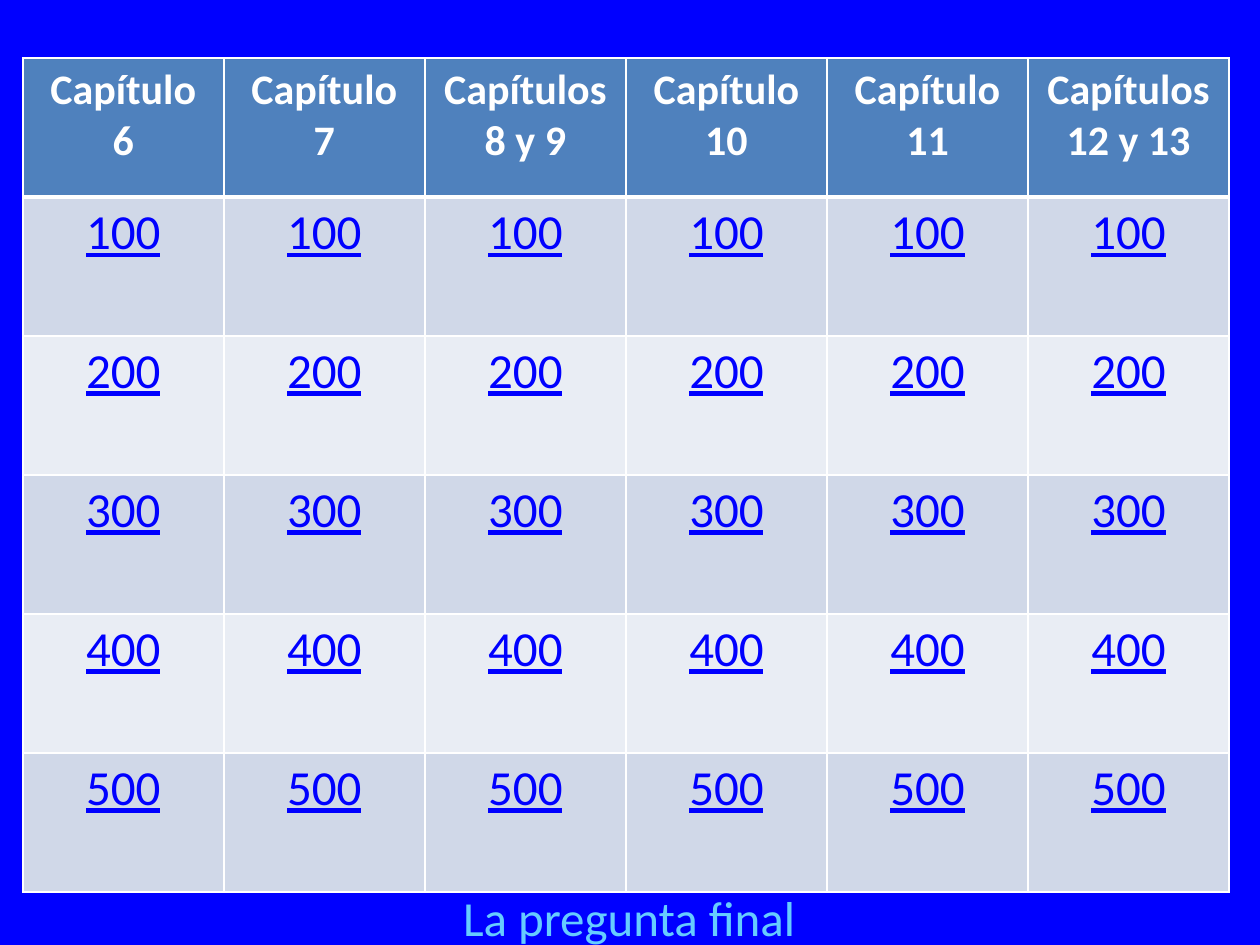
from pptx import Presentation
from pptx.dml.color import RGBColor
from pptx.enum.text import MSO_AUTO_SIZE, PP_ALIGN
from pptx.oxml import parse_xml
from pptx.oxml.ns import nsdecls
from pptx.util import Pt

BLUE, WHITE, SKY = "0000FF", "FFFFFF", "66CCFF"
HEADER, BANDS = "4F81BD", ("D0D8E8", "E9EDF4")


def color(value):
    return RGBColor.from_string(value)


def write(tf, text, size=28, fill=WHITE, bold=False, underline=False, font="Calibri"):
    """Put one centred, formatted paragraph in a text frame."""
    tf.word_wrap = True
    p = tf.paragraphs[0]
    p.alignment = PP_ALIGN.CENTER
    r = p.add_run()
    r.text = text
    r.font.name, r.font.size = font, Pt(size)
    r.font.bold, r.font.underline = bold, underline
    r.font.color.rgb = color(fill)


def set_borders(cell, bottom=1, top=1):
    """Draw white cell edges; the schema wants them ahead of the fill."""
    widths = {"lnL": 1, "lnR": 1, "lnT": top, "lnB": bottom}
    for i, (tag, width) in enumerate(widths.items()):
        cell._tc.get_or_add_tcPr().insert(i, parse_xml(
            f'<a:{tag} {nsdecls("a")} w="{Pt(width)}"><a:solidFill>'
            f'<a:srgbClr val="{WHITE}"/></a:solidFill></a:{tag}>'))


class Board:
    """A quiz board slide and its style."""

    def __init__(self, prs):
        self.s = prs.slides.add_slide(prs.slide_layouts[6])
        bg = self.s.background.fill
        bg.solid()
        bg.fore_color.rgb = color(BLUE)

    def grid(self, rows, x, y, col_width, row_height):
        n_rows, n_cols = len(rows), len(rows[0])
        table = self.s.shapes.add_table(
            n_rows, n_cols, Pt(x), Pt(y),
            Pt(col_width * n_cols), Pt(row_height * n_rows)).table
        for col in table.columns:
            col.width = Pt(col_width)
        for i, values in enumerate(rows):
            table.rows[i].height = Pt(row_height)
            for j, value in enumerate(values):
                self.cell(table.cell(i, j), value, i)

    def cell(self, cell, text, row):
        header = row == 0
        cell.fill.solid()
        cell.fill.fore_color.rgb = color(HEADER if header else BANDS[(row - 1) % 2])
        set_borders(cell, bottom=3 if header else 1, top=3 if row == 1 else 1)
        if header:
            write(cell.text_frame, text, size=24, bold=True)
        else:
            write(cell.text_frame, text, fill=BLUE, underline=True)

    def label(self, text, x, y, width, height, **style):
        tf = self.s.shapes.add_textbox(Pt(x), Pt(y), Pt(width), Pt(height)).text_frame
        write(tf, text, **style)
        tf.auto_size = MSO_AUTO_SIZE.SHAPE_TO_FIT_TEXT


def main():
    prs = Presentation()
    prs.slide_width, prs.slide_height = Pt(720), Pt(540)
    board = Board(prs)

    # Chapters across, points down
    chapters = ["Capítulo 6", "Capítulo 7", "Capítulos 8 y 9",
                "Capítulo 10", "Capítulo 11", "Capítulos 12 y 13"]
    points = [[str(n)] * len(chapters) for n in range(100, 600, 100)]
    board.grid([chapters] + points, x=13, y=33.2, col_width=114.9, row_height=79.4)

    # Final question
    board.label("La pregunta final", 213, 503.5, 293, 41, fill=SKY)

    prs.save("out.pptx")


if __name__ == "__main__":
    main()
